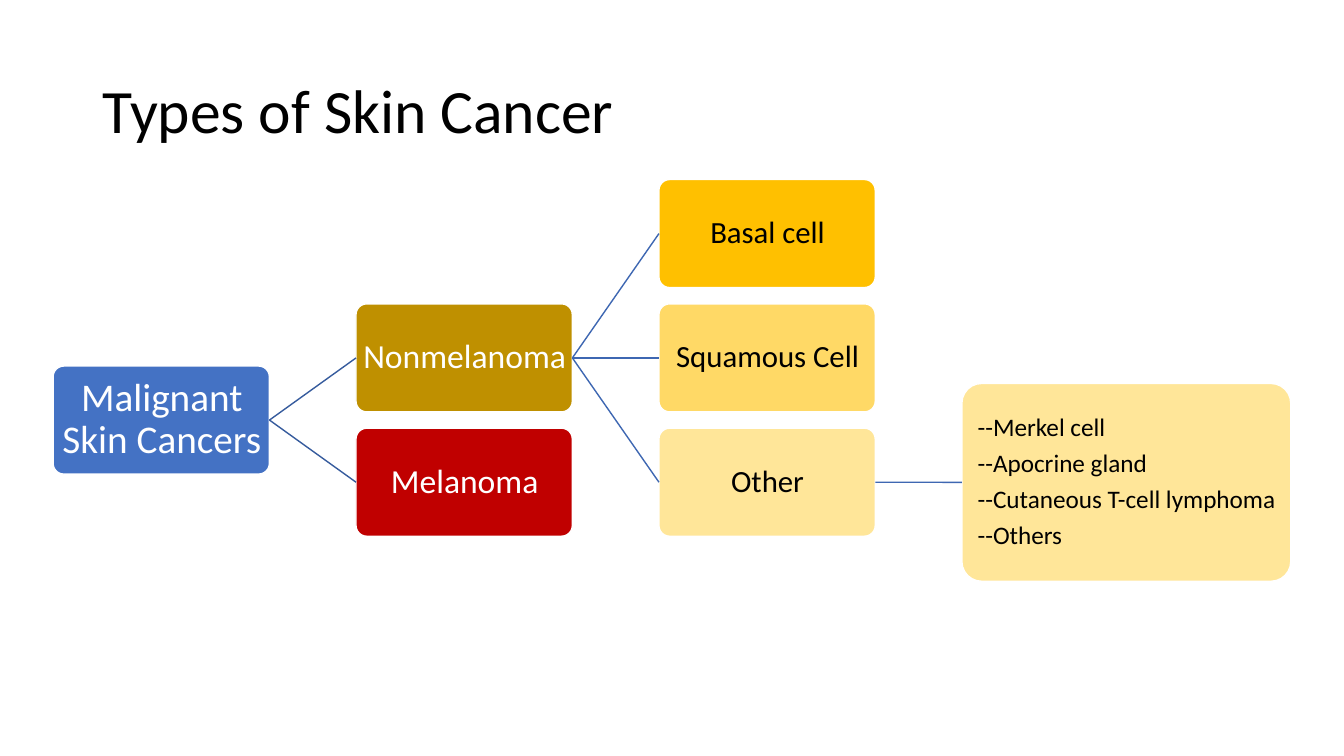
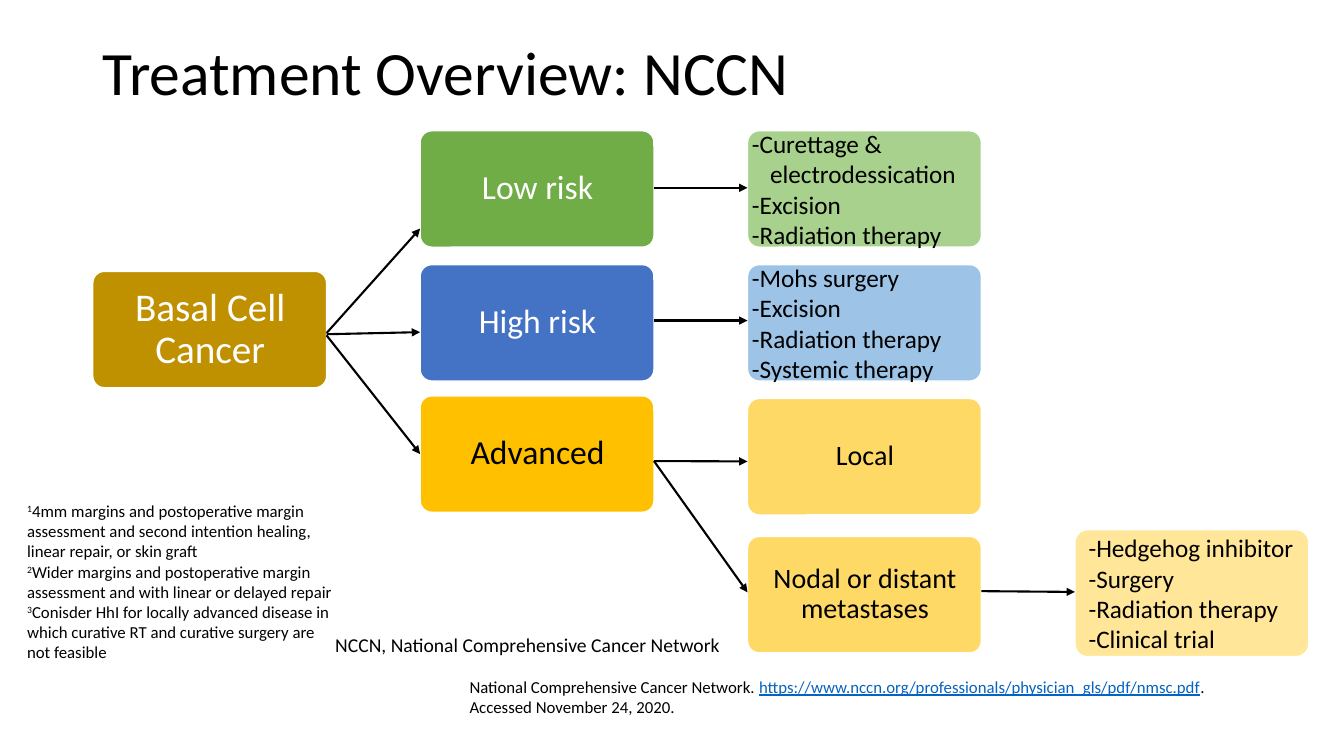
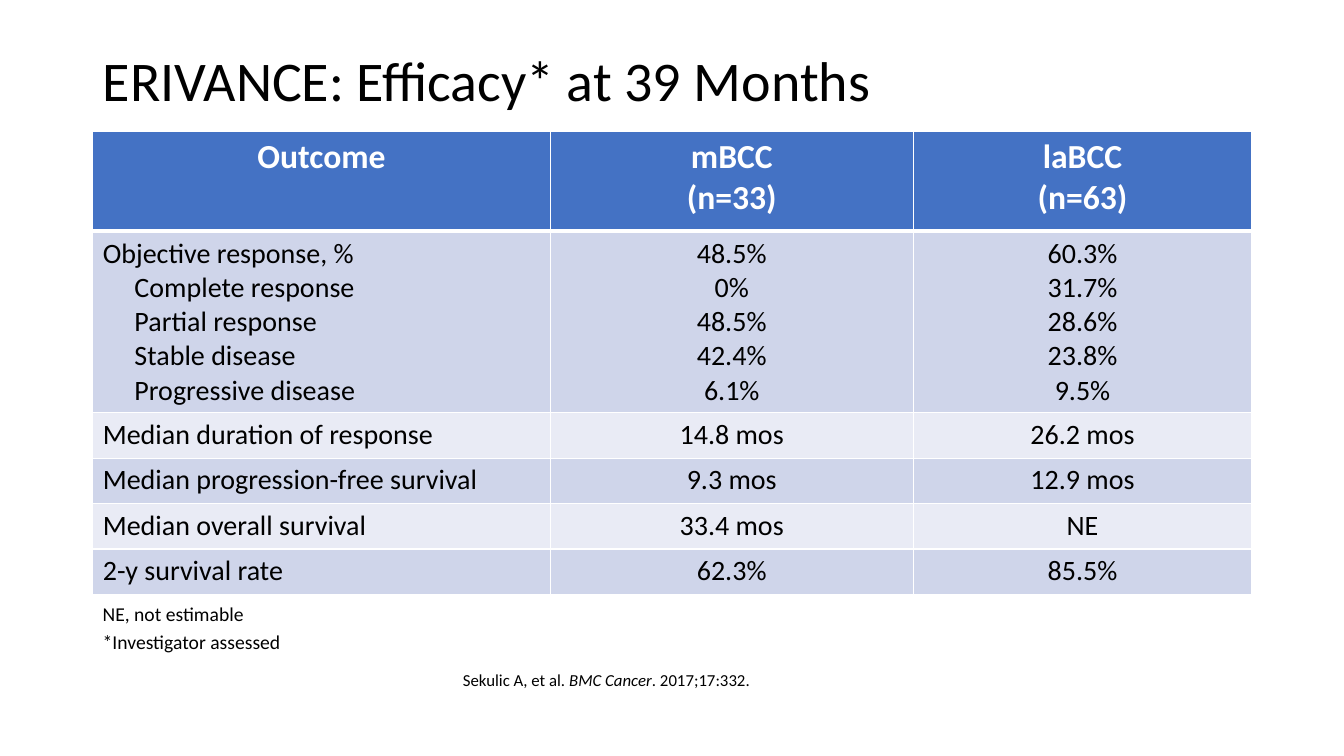
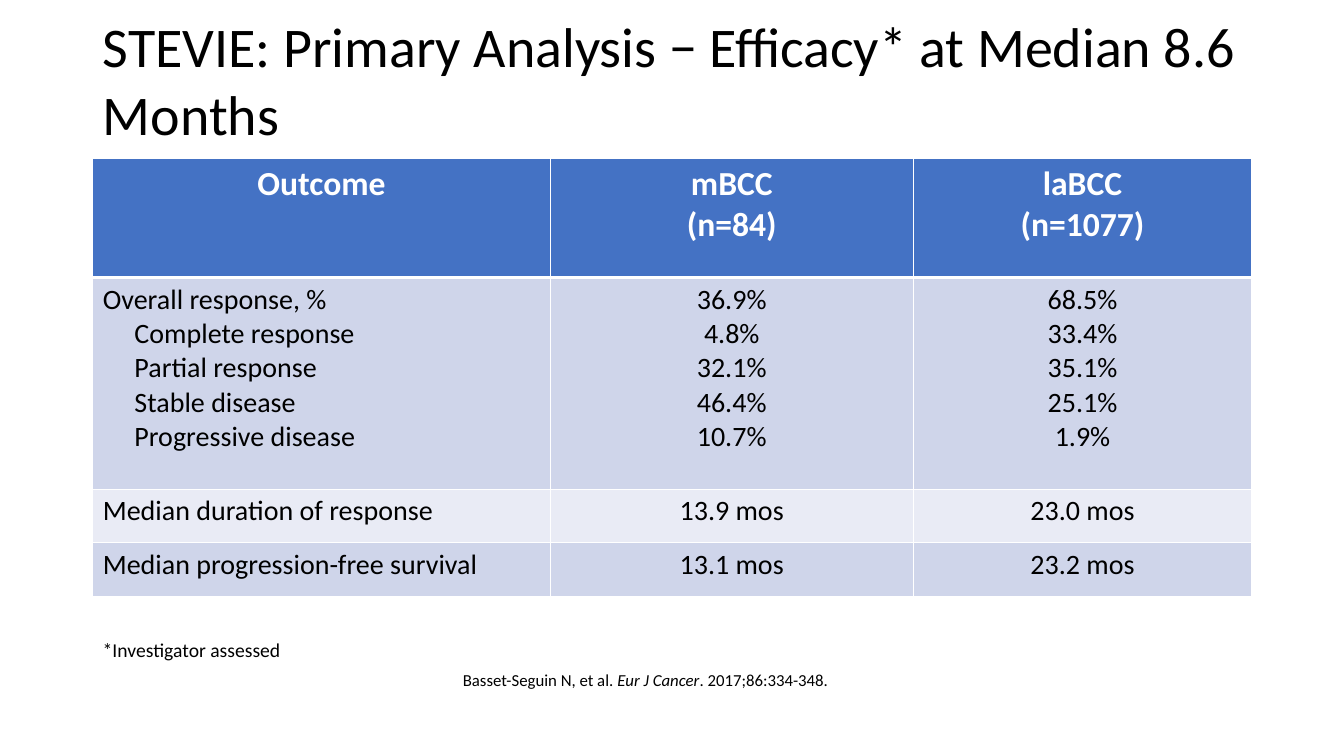
"""Build four slides on skin cancer types, treatment and trial efficacy."""
from lxml.etree import SubElement
from pptx import Presentation
from pptx.dml.color import RGBColor as RGB
from pptx.enum.shapes import MSO_CONNECTOR as CONN, MSO_SHAPE as SHAPE
from pptx.enum.text import MSO_ANCHOR as ANCHOR, MSO_AUTO_SIZE as FIT, PP_ALIGN as ALIGN
from pptx.oxml.ns import qn
from pptx.util import Emu, Inches, Pt

COLORS = {
    "black": "000000", "white": "FFFFFF", "blue": "4472C4", "sky": "9DC3E6",
    "bronze": "BF9000", "red": "C00000", "gold": "FFC000", "sand": "FFD966",
    "cream": "FFE699", "green": "70AD47", "mint": "A9D18E", "link": "0563C1",
    "branch": "365B9D", "twig": "3E67B2", "band": "CFD5EA", "light": "E9EBF5",
}
FONT = "Calibri"
MARGIN, BODY = 6.9, 86.25
COLUMNS = (34.05, 27, 25.2)
CITE_LEFT, CITE_TOP = 33.7, 87.9


class Deck:
    """Holds the style and the current slide; lengths are percent of the slide or tree cells."""

    def __init__(self):
        self.prs = Presentation()
        self.prs.slide_width, self.prs.slide_height = Inches(13.333), Inches(7.5)
        self.s = None
        self.tree = None

    def x(self, share):
        return Emu(round(self.prs.slide_width * share / 100))

    def y(self, share):
        return Emu(round(self.prs.slide_height * share / 100))

    def rect(self, left, top, width, height):
        return self.x(left), self.y(top), self.x(width), self.y(height)

    def color(self, name):
        return RGB.from_string(COLORS[name])

    def indent(self, paragraphs, left, first=0):
        for p in paragraphs:
            pPr = p._p.get_or_add_pPr()
            pPr.set("marL", str(Pt(left)))
            pPr.set("indent", str(Pt(first)))

    def put_lines(self, tf, lines, size, color="black", align=ALIGN.LEFT, spacing=1, after=0,
                  bold=False):
        tf.word_wrap = True
        for i, line in enumerate(lines):
            p = tf.add_paragraph() if i else tf.paragraphs[0]
            p.alignment, p.line_spacing, p.space_after = align, spacing, Pt(after)
            f = p.font
            f.name, f.size, f.bold = FONT, Pt(size), bold
            f.color.rgb = self.color(color)
            for text, style in [(line, "")] if isinstance(line, str) else line:
                r = p.add_run()
                r.text = text
                if style == "italic":
                    r.font.italic = True
                elif style == "link":
                    r.font.underline = True
                    r.font.color.rgb = self.color("link")
                elif style == "super":
                    r._r.get_or_add_rPr().set("baseline", "30000")

    def slide(self, title, top, size=44, spacing=0.9):
        self.s = self.prs.slides.add_slide(self.prs.slide_layouts[5])
        sp = self.s.shapes.title
        sp.left, sp.top, sp.width, sp.height = self.rect(MARGIN, top, BODY, 19.33)
        tf = sp.text_frame
        tf.auto_size, tf.vertical_anchor = FIT.NONE, ANCHOR.MIDDLE
        self.put_lines(tf, [title], size, spacing=spacing)

    def text(self, lines, left, top, width, height, size, after=0, anchor=ANCHOR.TOP):
        sp = self.s.shapes.add_textbox(*self.rect(left, top, width, height))
        sp.text_frame.vertical_anchor = anchor
        self.put_lines(sp.text_frame, lines, size, after=after)

    def node(self, col, row, lines, fill, size, color="black", wide=1, tall=1, listed=False,
             spacing=0.9, after=0, inset=0.02):
        left, top, width, height = self.tree
        sp = self.s.shapes.add_shape(SHAPE.ROUNDED_RECTANGLE, *self.rect(
            left + col * width * 1.4, top + row * height * 1.15, width * wide, height * tall))
        sp.adjustments[0] = 0.1
        sp.shadow.inherit = False
        sp.fill.solid()
        sp.fill.fore_color.rgb = self.color(fill)
        sp.line.color.rgb = self.color("white")
        sp.line.width = Pt(1)
        tf = sp.text_frame
        tf.margin_left = Inches(inset)
        tf.margin_top = tf.margin_right = tf.margin_bottom = Inches(0.01)
        tf.vertical_anchor = ANCHOR.MIDDLE
        self.put_lines(tf, lines, size, color, ALIGN.LEFT if listed else ALIGN.CENTER, spacing,
                       after)
        return sp

    def link(self, a, b, start=0.5, end=0.5, color="black", width=1.5, arrow=True):
        c = self.s.shapes.add_connector(
            CONN.STRAIGHT, a.left + a.width, round(a.top + a.height * start),
            b.left, round(b.top + b.height * end))
        c.line.color.rgb = self.color(color)
        c.line.width = Pt(width)
        if arrow:
            SubElement(c.line._get_or_add_ln(), qn("a:tailEnd"), type="triangle")
        SubElement(c._element.spPr, qn("a:effectLst"))

    def border(self, cell, bottom):
        tcPr = cell._tc.get_or_add_tcPr()
        for side, width in zip("LRTB", (1, 1, 1, bottom)):
            ln = SubElement(tcPr, qn("a:ln" + side), w=str(Pt(width)))
            SubElement(SubElement(ln, qn("a:solidFill")), qn("a:srgbClr"), val=COLORS["white"])

    def table(self, rows, top, heights):
        t = self.s.shapes.add_table(
            len(rows), len(COLUMNS), *self.rect(MARGIN, top, BODY, sum(heights))).table
        for column, width in zip(t.columns, COLUMNS):
            column.width = self.x(width)
        for i, (row, height) in enumerate(zip(rows, heights)):
            t.rows[i].height = self.y(height)
            head = i == 0
            fill = "blue" if head else "band" if i % 2 else "light"
            for j, text in enumerate(row):
                cell = t.cell(i, j)
                self.border(cell, 3 if head else 1)
                cell.fill.solid()
                cell.fill.fore_color.rgb = self.color(fill)
                self.put_lines(cell.text_frame, text.split("\n"), 24 if head else 20,
                               "white" if head else "black",
                               ALIGN.CENTER if head or j else ALIGN.LEFT, bold=head)
                if j == 0:
                    self.indent(cell.text_frame.paragraphs[1:], 22.6)

    def cite(self, authors, journal, issue):
        self.text([[(authors, ""), (journal, "italic"), (issue, "")]],
                  CITE_LEFT, CITE_TOP, 40, 4, 12)


def types_slide(d):
    d.slide("Types of Skin Cancer", 5.33)
    d.tree = (3.95, 23.75, 16.1, 14.3)
    root = d.node(0, 1.5, ["Malignant Skin Cancers"], "blue", 28, "white")
    non = d.node(1, 1, ["Nonmelanoma"], "bronze", 24, "white")
    melanoma = d.node(1, 2, ["Melanoma"], "red", 24, "white")
    kinds = [d.node(2, row, [name], fill, 22) for row, (name, fill) in enumerate(
        [("Basal cell", "gold"), ("Squamous Cell", "sand"), ("Other", "cream")])]
    others = d.node(3, 1.64, ["--Merkel cell", "--Apocrine gland", "--Cutaneous T-cell lymphoma",
                              "--Others"], "cream", 18, wide=1.52, tall=1.83, listed=True,
                    after=6.3, inset=0.1)
    for child in (non, melanoma):
        d.link(root, child, color="branch", width=1, arrow=False)
    for a, b in [(non, kind) for kind in kinds] + [(kinds[-1], others)]:
        d.link(a, b, color="twig", width=1, arrow=False)


def treatment_slide(d):
    d.slide("Treatment Overview: NCCN", 0.27)
    d.tree = (MARGIN, 17.3, 17.4, 15.4)
    plain = {"listed": True, "spacing": 1, "inset": 0.01}
    root = d.node(0, 1.05, ["Basal Cell Cancer"], "bronze", 28, "white")
    low = d.node(1, 0, ["Low risk"], "green", 24, "white")
    high = d.node(1, 1, ["High risk"], "blue", 24, "white")
    advanced = d.node(1, 1.98, ["Advanced"], "gold", 24)
    low_care = d.node(2, 0, ["-Curettage & electrodessication", "-Excision", "-Radiation therapy"],
                      "mint", 18, **plain)
    d.indent(low_care.text_frame.paragraphs, 13, -13)
    high_care = d.node(2, 1, ["-Mohs surgery", "-Excision", "-Radiation therapy",
                              "-Systemic therapy"], "sky", 18, **plain)
    local = d.node(2, 2, ["Local"], "sand", 20)
    distant = d.node(2, 3.03, ["Nodal or distant metastases"], "sand", 20)
    distant_care = d.node(3, 2.98, ["-Hedgehog inhibitor", "-Surgery", "-Radiation therapy",
                                    "-Clinical trial"], "cream", 18, tall=1.09,
                          **{**plain, "inset": 0.1})
    for a, b, start, end in [
        (root, low, 0.53, 0.84), (root, high, 0.54, 0.58), (root, advanced, 0.55, 0.5),
        (low, low_care, 0.49, 0.49), (high, high_care, 0.48, 0.48),
        (advanced, local, 0.56, 0.54), (advanced, distant, 0.56, 0.48),
        (distant, distant_care, 0.47, 0.49),
    ]:
        d.link(a, b, start, end)
    notes = [
        "4mm margins and postoperative margin assessment and second intention healing, "
        "linear repair, or skin graft",
        "Wider margins and postoperative margin assessment and with linear or delayed repair",
        "Conisder HhI for locally advanced disease in which curative RT and curative surgery "
        "are not feasible",
    ]
    d.text([[(str(n), "super"), (note, "")] for n, note in enumerate(notes, 1)],
           1.28, 65.6, 24.6, 22.9, 12)
    d.text(["NCCN, National Comprehensive Cancer Network"], 24.2, 83.1, 32, 4.5, 14)
    d.text([[("National Comprehensive Cancer Network. ", ""),
             ("https://www.nccn.org/professionals/physician_gls/pdf/nmsc.pdf", "link"),
             (". Accessed November 24, 2020.", "")]], 34.2, 88.8, 59.7, 6.7, 12)


def erivance_slide(d):
    d.slide("ERIVANCE: Efficacy* at 39 Months", 0.8, 40, 1)
    d.table([
        ("Outcome", "mBCC\n(n=33)", "laBCC\n(n=63)"),
        ("Objective response, %\nComplete response\nPartial response\nStable disease\n"
         "Progressive disease",
         "48.5%\n0%\n48.5%\n42.4%\n6.1%", "60.3%\n31.7%\n28.6%\n23.8%\n9.5%"),
        ("Median duration of response", "14.8 mos", "26.2 mos"),
        ("Median progression-free survival", "9.3 mos", "12.9 mos"),
        ("Median overall survival", "33.4 mos", "NE"),
        ("2-y survival rate", "62.3%", "85.5%"),
    ], 17.4, (13.2, 23.8, 6, 6, 6, 6))
    d.text(["NE, not estimable", "*Investigator assessed"], MARGIN, 78.9, 69.7, 8.2, 14, 3,
           ANCHOR.BOTTOM)
    d.cite("Sekulic A, et al. ", "BMC Cancer", ". 2017;17:332.")


def stevie_slide(d):
    d.slide("STEVIE: Primary Analysis − Efficacy* at Median 8.6 Months", 0.8, 40, 1)
    d.table([
        ("Outcome", "mBCC\n(n=84)", "laBCC\n(n=1077)"),
        ("Overall response, %\nComplete response\nPartial response\nStable disease\n"
         "Progressive disease",
         "36.9%\n4.8%\n32.1%\n46.4%\n10.7%", "68.5%\n33.4%\n35.1%\n25.1%\n1.9%"),
        ("Median duration of response", "13.9 mos", "23.0 mos"),
        ("Median progression-free survival", "13.1 mos", "23.2 mos"),
    ], 21, (15.7, 28, 7.1, 7.1))
    d.text(["*Investigator assessed"], MARGIN, 83.75, 20, 4.5, 14)
    d.cite("Basset-Seguin N, et al. ", "Eur J Cancer", ". 2017;86:334-348.")


def main():
    d = Deck()
    for build in (types_slide, treatment_slide, erivance_slide, stevie_slide):
        build(d)
    d.prs.save("out.pptx")


if __name__ == "__main__":
    main()
